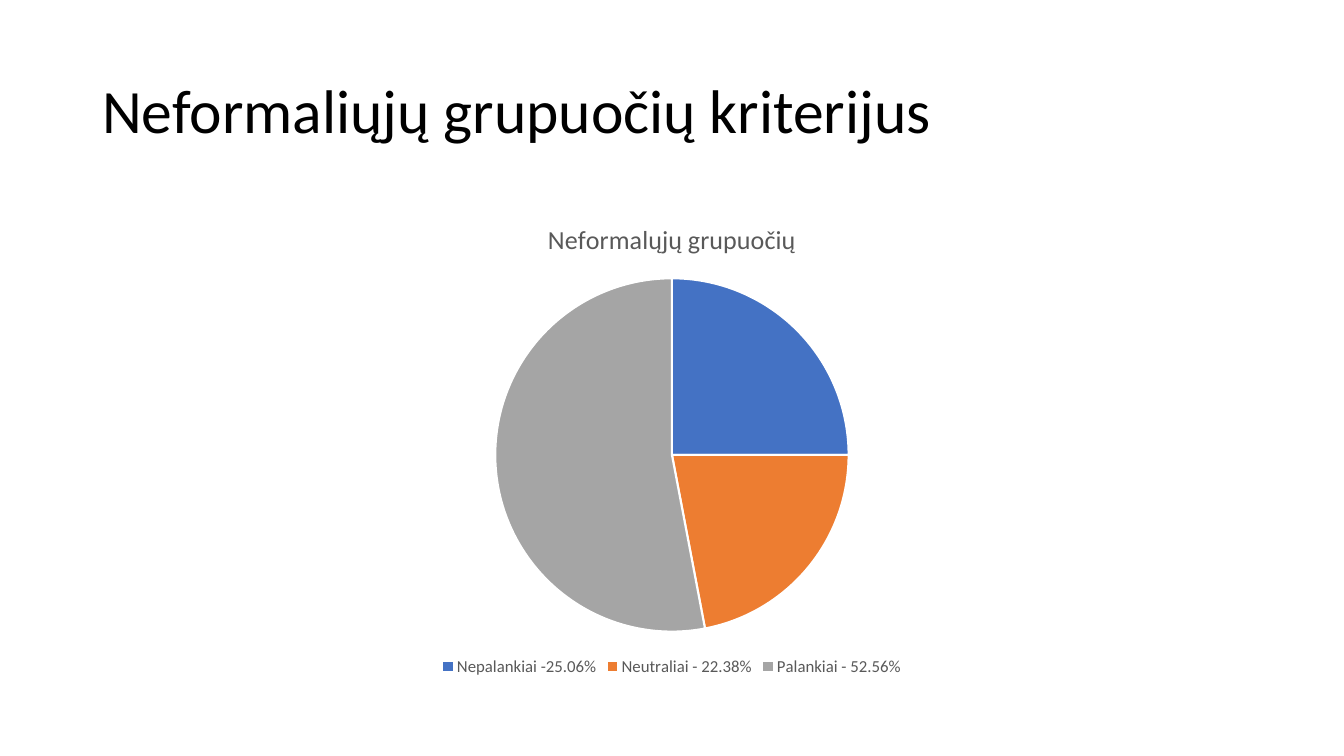
"""Build a slide with a pie chart of the informal groups criterion."""
from pptx import Presentation
from pptx.chart.data import CategoryChartData
from pptx.dml.color import RGBColor
from pptx.enum.chart import XL_CHART_TYPE as ChartType, XL_LEGEND_POSITION as LegendPosition
from pptx.enum.text import MSO_ANCHOR as Anchor
from pptx.util import Pt

BLACK = RGBColor(0x00, 0x00, 0x00)
WHITE = RGBColor(0xFF, 0xFF, 0xFF)
GREY_TEXT = RGBColor(0x59, 0x59, 0x59)
BLUE = RGBColor(0x44, 0x72, 0xC4)
ORANGE = RGBColor(0xED, 0x7D, 0x31)
GREY = RGBColor(0xA5, 0xA5, 0xA5)

FONT = "Calibri"
HEADING = "Neformaliųjų grupuočių kriterijus"
CHART_TITLE = "Neformalųjų grupuočių"
SLICES = [
    ("Nepalankiai -25.06%", 25, BLUE),
    ("Neutraliai - 22.38%", 22, ORANGE),
    ("Palankiai - 52.56%", 53, GREY),
]
LEFT, WIDTH = Pt(66), Pt(828)


def style_font(font, size, color):
    font.name = FONT
    font.size = Pt(size)
    font.bold = False
    font.color.rgb = color


def add_heading(page):
    box = page.shapes.add_textbox(LEFT, Pt(28.75), WIDTH, Pt(104.4))
    frame = box.text_frame
    frame.word_wrap = True
    frame.vertical_anchor = Anchor.MIDDLE
    frame.text = HEADING
    para = frame.paragraphs[0]
    para.line_spacing = 0.9
    style_font(para.runs[0].font, 44, BLACK)


def add_pie(page):
    data = CategoryChartData()
    data.categories = [label for label, _, _ in SLICES]
    data.add_series(CHART_TITLE, [value for _, value, _ in SLICES])
    chart = page.shapes.add_chart(ChartType.PIE, LEFT, Pt(143.75), WIDTH, Pt(342.6), data).chart
    style_font(chart.font, 10, BLACK)

    chart.has_title = True
    title = chart.chart_title
    title.include_in_layout = False
    title.text_frame.text = CHART_TITLE
    style_font(title.text_frame.paragraphs[0].runs[0].font, 18.6, GREY_TEXT)

    chart.has_legend = True
    chart.legend.position = LegendPosition.BOTTOM
    chart.legend.include_in_layout = False
    style_font(chart.legend.font, 12, GREY_TEXT)

    plot = chart.plots[0]
    plot.vary_by_categories = True
    for index, (_, _, color) in enumerate(SLICES):
        piece = plot.series[0].points[index].format
        piece.fill.solid()
        piece.fill.fore_color.rgb = color
        piece.line.color.rgb = WHITE
        piece.line.width = Pt(1.5)


def main():
    deck = Presentation()
    deck.slide_width, deck.slide_height = Pt(960), Pt(540)
    page = deck.slides.add_slide(deck.slide_layouts[6])
    add_heading(page)
    add_pie(page)
    deck.save("out.pptx")


if __name__ == "__main__":
    main()
